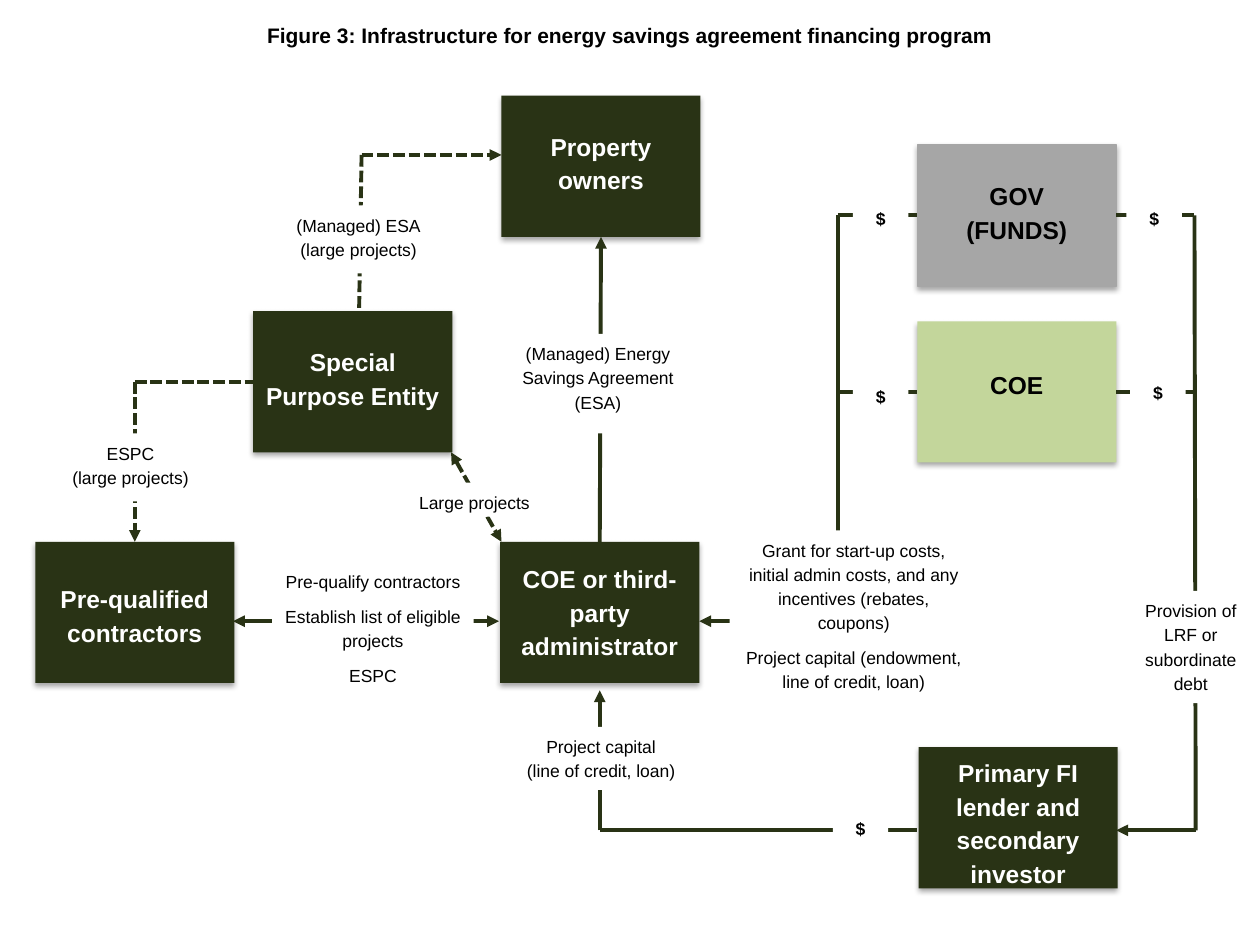
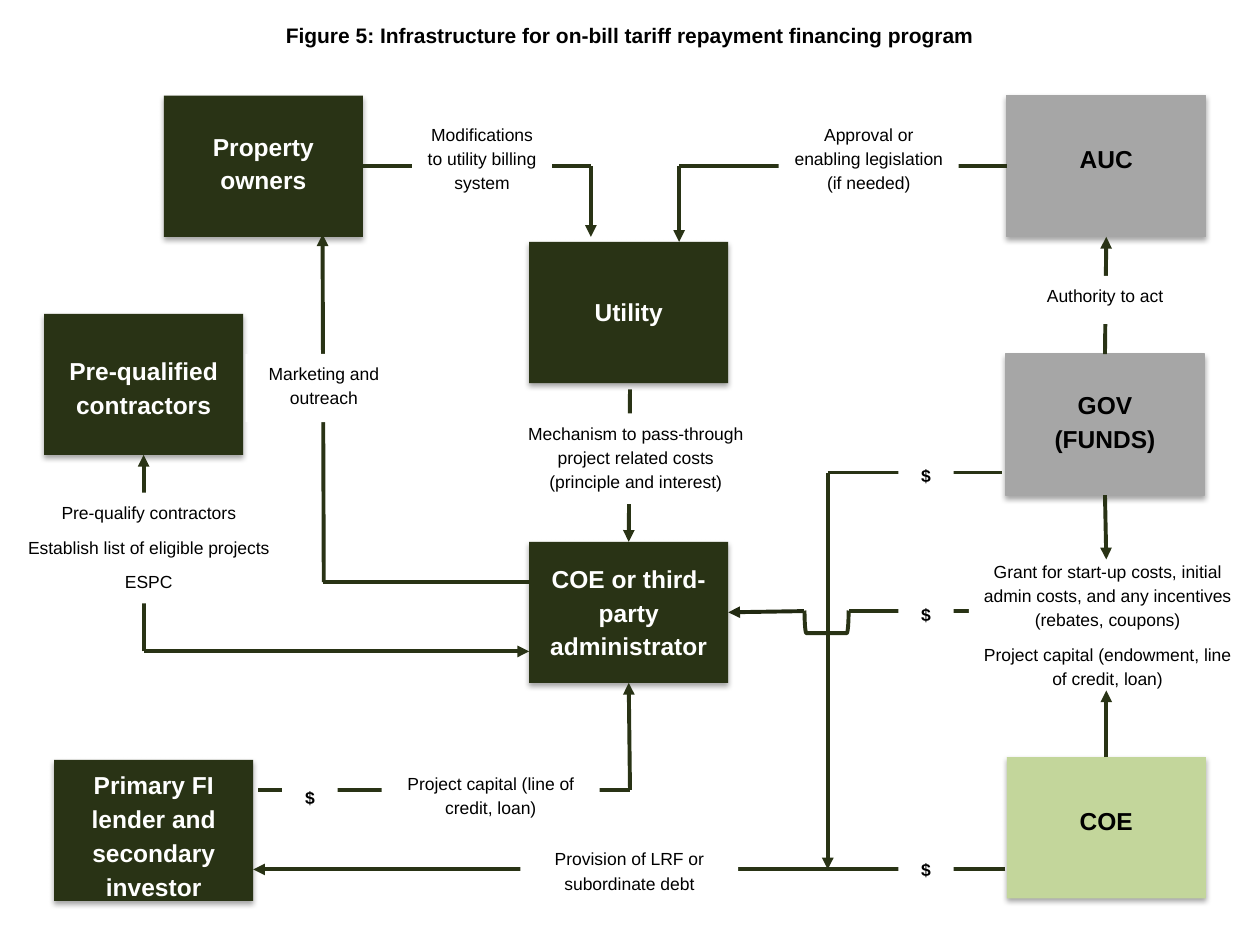
"""Builds two financing-program infrastructure diagrams."""
from lxml.etree import SubElement
from pptx import Presentation
from pptx.dml.color import RGBColor
from pptx.enum.dml import MSO_LINE
from pptx.enum.shapes import MSO_CONNECTOR, MSO_SHAPE
from pptx.enum.text import MSO_ANCHOR, MSO_AUTO_SIZE, PP_ALIGN
from pptx.oxml.ns import qn
from pptx.util import Inches, Pt

COLS, ROWS = 100, 75
GREEN, GREY, LIME = "293315", "A6A6A6", "C3D69B"
BRIDGE, BLACK, WHITE = "212911", "000000", "FFFFFF"
TOP, LEFT, BOTTOM, RIGHT = range(4)
NODE_W, NODE_H = 15.8, 11.2
ADMIN = "COE or third-party administrator"
LENDER = "Primary FI lender and secondary investor"
CONTRACTORS = "Pre-qualified contractors"
FUNDER = "GOV\n(FUNDS)"
DUTIES = "Pre-qualify contractors\nEstablish list of eligible projects\nESPC"
GRANT = ("Grant for start-up costs, initial admin costs, and any incentives "
         "(rebates, coupons)\nProject capital (endowment, line of credit, loan)")
DEBT = "Provision of LRF or subordinate debt"


def rgb(color):
    return RGBColor.from_string(color)


def write(sp, text, size=10, color=BLACK, bold=False, after=0, spacing=1.15,
          anchor=MSO_ANCHOR.TOP, lead=0):
    tf = sp.text_frame
    tf.word_wrap = True
    tf.auto_size = MSO_AUTO_SIZE.NONE
    tf.vertical_anchor = anchor
    tf.margin_left = tf.margin_right = Inches(0.1)
    tf.margin_top = Inches(0.05 + lead)
    tf.margin_bottom = Inches(0.05)
    for i, line in enumerate(text.split("\n")):
        p = tf.add_paragraph() if i else tf.paragraphs[0]
        p.alignment = PP_ALIGN.CENTER
        p.line_spacing = spacing
        p.space_before, p.space_after = Pt(0), Pt(after)
        r = p.add_run()
        r.text = line
        r.font.name, r.font.size, r.font.bold = "Arial", Pt(size), bold
        r.font.color.rgb = rgb(color)


class Diagram:
    def __init__(self, prs):
        self.prs = prs
        self.cell_w = prs.slide_width / COLS
        self.cell_h = prs.slide_height / ROWS

    def at(self, x, y):
        return round(x * self.cell_w), round(y * self.cell_h)

    def start(self, title):
        self.s = self.prs.slides.add_slide(self.prs.slide_layouts[5])
        sp = self.s.shapes.title
        sp.left, sp.top = self.at(0, 1.3)
        sp.width, sp.height = self.at(COLS, 3.9)
        write(sp, title, size=12, bold=True, spacing=1)

    def shape(self, kind, x, y, w, h, fill=None, line=None, weight=2.25):
        sp = self.s.shapes.add_shape(kind, *self.at(x, y), *self.at(w, h))
        if fill:
            sp.fill.solid()
            sp.fill.fore_color.rgb = rgb(fill)
        else:
            sp.fill.background()
        if line:
            sp.line.color.rgb = rgb(line)
            sp.line.width = Pt(weight)
        else:
            sp.line.fill.background()
        sp.shadow.inherit = False
        return sp

    def node(self, text, x, y, lead=0.0, fill=GREEN):
        sp = self.shape(MSO_SHAPE.RECTANGLE, x, y, NODE_W, NODE_H, fill,
                        GREY if fill == GREY else None, 0.75)
        effects = sp._element.spPr.find(qn("a:effectLst"))
        shadow = SubElement(effects, qn("a:outerShdw"), blurRad=str(Pt(3.1)),
                            dist=str(Pt(1.8)), dir="5400000", rotWithShape="0")
        color = SubElement(shadow, qn("a:srgbClr"), val=BLACK)
        SubElement(color, qn("a:alpha"), val="35000")
        write(sp, text, size=14, bold=True, lead=lead,
              color=WHITE if fill == GREEN else BLACK)
        return sp

    def label(self, text, x, y, w, h, **fmt):
        write(self.shape(MSO_SHAPE.RECTANGLE, x, y, w, h, WHITE), text, **fmt)

    def dollars(self, *spots):
        for x, y in spots:
            self.label("$", x, y, 4.4, 3.5, bold=True, anchor=MSO_ANCHOR.MIDDLE)

    def link(self, start, end, heads="", dash=False, color=GREEN):
        """Joins two ends, each a grid point or a (node, side) pair."""
        points = [(0, 0) if hasattr(a, "shape_id") else self.at(a, b)
                  for a, b in (start, end)]
        c = self.s.shapes.add_connector(MSO_CONNECTOR.STRAIGHT, *points[0], *points[1])
        for (a, b), connect in ((start, c.begin_connect), (end, c.end_connect)):
            if hasattr(a, "shape_id"):
                connect(a, b)
        c.line.color.rgb = rgb(color)
        c.line.width = Pt(2.25)
        if dash:
            c.line.dash_style = MSO_LINE.SQUARE_DOT
        ln = c.line._get_or_add_ln()
        for mark, tag in (("<", "a:headEnd"), (">", "a:tailEnd")):
            if mark in heads:
                SubElement(ln, qn(tag), type="triangle")
        SubElement(c._element.spPr, qn("a:effectLst"))


def savings_agreement(d):
    d.start("Figure 3: Infrastructure for energy savings agreement financing program")
    contractors = d.node(CONTRACTORS, 2.8, 43, 0.25)
    owners = d.node("Property owners", 39.8, 7.6, 0.2)
    admin = d.node(ADMIN, 39.7, 43, 0.09)
    d.node(LENDER, 72.9, 59.3)
    funder = d.node(FUNDER, 72.8, 11.5, 0.2, GREY)
    coe = d.node("COE", 72.8, 25.5, 0.3, LIME)
    entity = d.node("Special Purpose Entity", 20.1, 24.7, 0.2)

    d.link((39.6, 49.3), (18.5, 49.3), "<>")
    d.link((admin, TOP), (owners, BOTTOM), ">")
    d.link((47.6, 65.9), (72.8, 65.9))
    d.link((47.6, 65.9), (47.6, 54.8), ">")
    d.link((61.8, 49.3), (55.5, 49.3), ">")
    d.link((10.7, 30.3), (contractors, TOP), ">", dash=True)
    d.link((10.7, 30.3), (entity, LEFT), dash=True)
    d.link((28.7, 12.3), (28.5, 24.7), dash=True)
    d.link((28.7, 12.3), (39.8, 12.3), ">", dash=True)
    d.link((35.8, 35.9), (39.8, 43), "<>", dash=True)
    d.link((94.9, 65.9), (88.6, 65.9), ">")
    d.link((94.8, 17.1), (94.9, 65.9))
    d.link((66.5, 17.1), (66.5, 49.3))
    for node, y in ((funder, 17.1), (coe, 31.1)):
        d.link((node, RIGHT), (94.8, y))
        d.link((66.5, y), (node, LEFT))

    d.label(DUTIES, 21.6, 44.6, 16, 10.2, after=6)
    d.label("(Managed) Energy Savings Agreement (ESA)", 39, 26.5, 16.9, 7.9)
    d.label("Project capital\n(line of credit, loan)", 39.8, 57.7, 15.8, 5)
    d.label("ESPC\n(large projects)", 4.3, 34.4, 12.1, 5.4)
    d.label("(Managed) ESA\n(large projects)", 22.4, 16.3, 12.1, 5.4)
    d.label("Large projects", 31.6, 38.3, 12.1, 2.7)
    d.label(DEBT, 89.4, 46.9, 10.2, 8.9)
    d.label(GRANT, 57.9, 42.1, 19.7, 13.5, after=6)
    d.dollars((66.1, 63.9), (89.7, 29.3), (89.4, 15.5), (67.7, 15.5), (67.7, 29.6))


def tariff_repayment(d):
    d.start("Figure 5: Infrastructure for on-bill tariff repayment financing program")
    admin = d.node(ADMIN, 42, 43, 0.09)
    d.node("Utility", 42, 19.2, 0.35)
    contractors = d.node(CONTRACTORS, 3.5, 24.9, 0.25)
    d.node(LENDER, 4.3, 60.3)
    funder = d.node(FUNDER, 79.8, 28.1, 0.2, GREY)
    auc = d.node("AUC", 79.9, 7.6, 0.3, GREY)
    owners = d.node("Property owners", 13, 7.6, 0.2)
    coe = d.node("COE", 79.9, 60.1, 0.3, LIME)

    d.link((auc, LEFT), (53.9, 13.2))
    d.link((53.9, 13.2), (53.9, 19.2), ">")
    d.link((46.9, 13.2), (owners, RIGHT))
    d.link((46.9, 13.2), (46.9, 18.8), ">")
    d.link((11.4, 51.7), (contractors, BOTTOM), ">")
    d.link((11.4, 51.7), (42, 51.7), ">")
    d.link((50, 30.9), (admin, TOP), ">")
    d.link((25.7, 46.2), (25.6, 18.6), ">")
    d.link((25.6, 46.2), (42.1, 46.2))
    d.link((funder, TOP), (auc, BOTTOM), ">")
    d.link((79.8, 69), (20.1, 69), ">")
    d.link((20.5, 62.7), (50, 62.7))
    d.link((50, 62.7), (admin, BOTTOM), ">")
    d.link((65.7, 37.5), (79.5, 37.5))
    d.link((65.7, 37.5), (65.7, 69), ">")
    d.link((63.8, 48.5), (admin, RIGHT), ">", color=BRIDGE)
    d.shape(MSO_SHAPE.LEFT_BRACKET, 64.7, 47.6, 1.8, 3.5, line=GREEN).rotation = 270
    d.link((67.4, 48.5), (87.9, 48.5))

    d.label("Approval or enabling legislation (if needed)", 61.8, 9.1, 14.3, 7)
    d.label("Modifications to utility billing system", 32.7, 9.1, 11.1, 7.1)
    d.label("Mechanism to pass-through project related costs (principle and interest)",
            40.6, 32.8, 19.7, 7.2)
    d.label("Marketing and outreach", 19.5, 28.1, 12.4, 5.4)
    d.label("Authority to act", 82.1, 21.9, 11.2, 3.8)
    d.label(DEBT, 41.3, 66.6, 17.3, 4.7)
    d.label("Project capital (line of credit, loan)", 30.3, 60.6, 17.3, 5)
    d.label(GRANT, 76.9, 43.8, 22, 12.7, after=6)
    d.label(DUTIES, 1.2, 39.1, 21.2, 8.8, after=6)
    d.dollars((22.4, 61.4), *((71.3, y) for y in (67.1, 35.9, 46.9)))
    d.link((coe, TOP), (87.8, 54.8), ">")
    d.link((funder, BOTTOM), (87.8, 44.4), ">")


def main():
    prs = Presentation()
    prs.slide_width, prs.slide_height = Inches(10), Inches(7.5)
    d = Diagram(prs)
    savings_agreement(d)
    tariff_repayment(d)
    prs.save("out.pptx")


if __name__ == "__main__":
    main()
